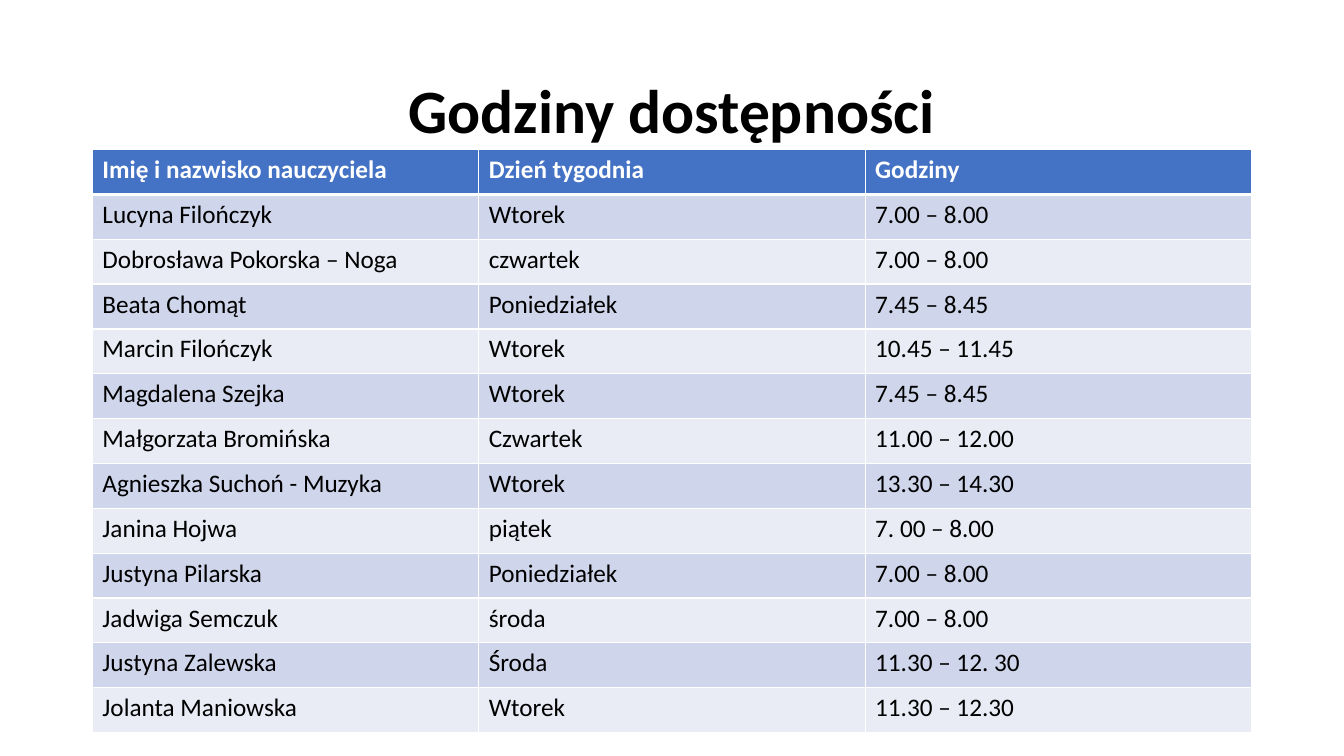
from lxml.etree import SubElement
from pptx import Presentation
from pptx.dml.color import RGBColor
from pptx.enum.text import MSO_ANCHOR, PP_ALIGN
from pptx.oxml.ns import qn
from pptx.util import Pt

BLACK = RGBColor(0x00, 0x00, 0x00)
WHITE = RGBColor(0xFF, 0xFF, 0xFF)
HEADER_BLUE = RGBColor(0x44, 0x72, 0xC4)
DARK_BAND = RGBColor(0xCF, 0xD5, 0xEA)
LIGHT_BAND = RGBColor(0xE9, 0xEB, 0xF5)

LEFT, WIDTH = Pt(66), Pt(828)
ROW_HEIGHT = Pt(32.05)

SCHEDULE = [
    ("Imię i nazwisko nauczyciela", "Dzień tygodnia", "Godziny"),
    ("Lucyna Filończyk", "Wtorek", "7.00 – 8.00"),
    ("Dobrosława Pokorska – Noga", "czwartek", "7.00 – 8.00"),
    ("Beata Chomąt", "Poniedziałek", "7.45 – 8.45"),
    ("Marcin Filończyk", "Wtorek", "10.45 – 11.45"),
    ("Magdalena Szejka", "Wtorek", "7.45 – 8.45"),
    ("Małgorzata Bromińska", "Czwartek", "11.00 – 12.00"),
    ("Agnieszka Suchoń - Muzyka", "Wtorek", "13.30 – 14.30"),
    ("Janina Hojwa", "piątek", "7. 00 – 8.00"),
    ("Justyna Pilarska", "Poniedziałek", "7.00 – 8.00"),
    ("Jadwiga Semczuk", "środa", "7.00 – 8.00"),
    ("Justyna Zalewska", "Środa", "11.30 – 12. 30"),
    ("Jolanta Maniowska", "Wtorek", "11.30 – 12.30"),
]


def add_border(cell, side, width):
    line = SubElement(cell._tc.get_or_add_tcPr(), qn(f"a:ln{side}"), w=str(Pt(width)))
    fill = SubElement(line, qn("a:solidFill"))
    SubElement(fill, qn("a:srgbClr"), val=str(WHITE))


def set_font(para, size, color, bold):
    para.font.name = "Calibri"
    para.font.size = Pt(size)
    para.font.bold = bold
    para.font.color.rgb = color


deck = Presentation()
deck.slide_width, deck.slide_height = Pt(960), Pt(540)
page = deck.slides.add_slide(deck.slide_layouts[5])

title = page.shapes.title
title.left, title.top, title.width, title.height = LEFT, Pt(28.75), WIDTH, Pt(104.4)
title.text_frame.text = "Godziny dostępności"
title.text_frame.vertical_anchor = MSO_ANCHOR.MIDDLE
heading = title.text_frame.paragraphs[0]
heading.alignment = PP_ALIGN.CENTER
heading.line_spacing = 0.9
set_font(heading, 44, BLACK, True)

frame = page.shapes.add_table(
    len(SCHEDULE), 3, LEFT, Pt(106.8), WIDTH, ROW_HEIGHT * len(SCHEDULE)
)
table = frame.table

for row_number, entries in enumerate(SCHEDULE):
    table.rows[row_number].height = ROW_HEIGHT
    is_header = row_number == 0
    if is_header:
        fill_color = HEADER_BLUE
    else:
        fill_color = DARK_BAND if row_number % 2 else LIGHT_BAND
    widths = {"L": 1, "R": 1, "T": 3 if row_number == 1 else 1, "B": 3 if is_header else 1}
    for column_number, entry in enumerate(entries):
        cell = table.cell(row_number, column_number)
        cell.text = entry
        for side, width in widths.items():
            add_border(cell, side, width)
        cell.fill.solid()
        cell.fill.fore_color.rgb = fill_color
        set_font(cell.text_frame.paragraphs[0], 18, WHITE if is_header else BLACK, is_header)

deck.save("out.pptx")
